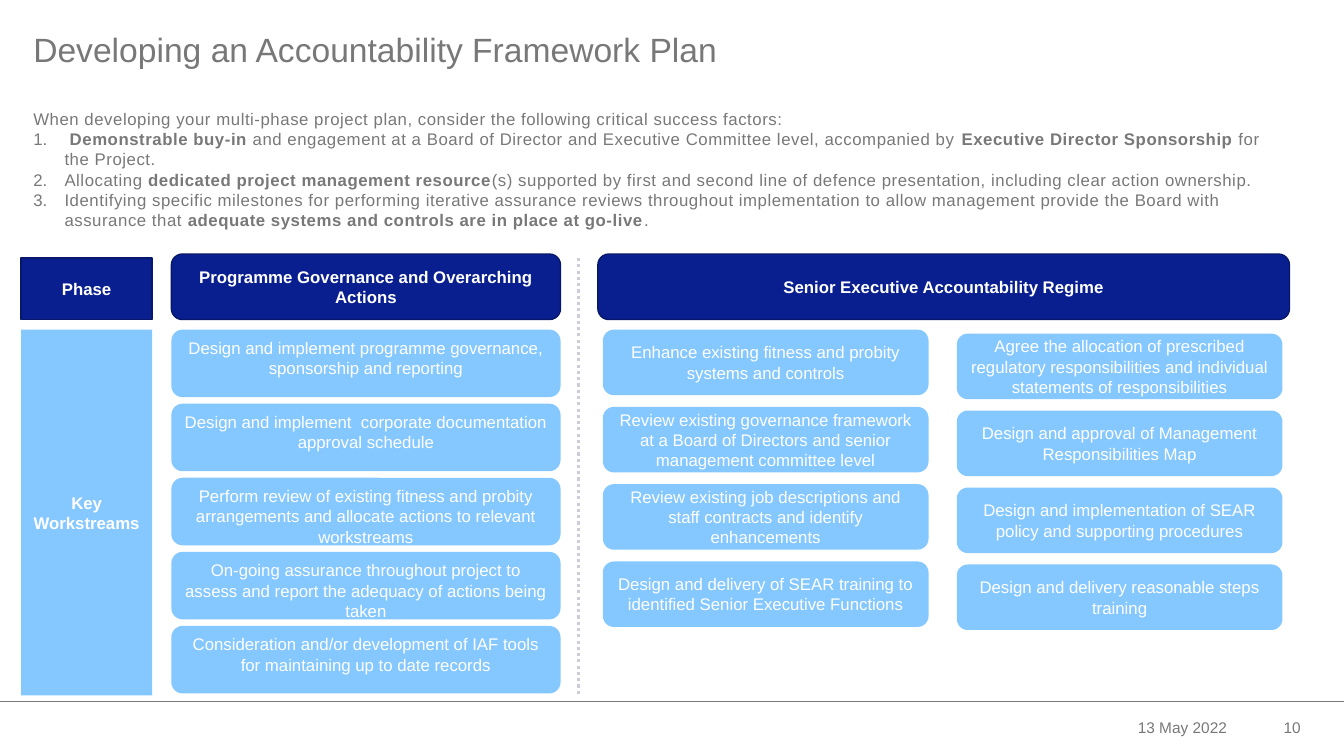
from dataclasses import dataclass

from lxml.etree import SubElement
from pptx import Presentation
from pptx.dml.color import RGBColor
from pptx.enum.dml import MSO_LINE
from pptx.enum.shapes import MSO_CONNECTOR, MSO_SHAPE
from pptx.enum.text import MSO_ANCHOR as Anchor
from pptx.enum.text import MSO_AUTO_SIZE, PP_ALIGN as Align
from pptx.oxml.ns import qn
from pptx.slide import Slide
from pptx.text.text import TextFrame
from pptx.util import Inches, Pt

GREY = RGBColor(0x78, 0x78, 0x78)
WHITE = RGBColor(0xFF, 0xFF, 0xFF)
NAVY = RGBColor(0x0A, 0x1F, 0x8F)
DARK_NAVY = RGBColor(0x07, 0x17, 0x6A)
SKY = RGBColor(0x85, 0xC8, 0xFF)
PALE = RGBColor(0xCC, 0xCC, 0xDB)


@dataclass
class Box:
    left: float
    top: float
    width: float
    height: float
    text: str
    rounded: bool = True
    header: bool = False
    anchor: Anchor = Anchor.MIDDLE


@dataclass
class Column:
    left: float
    top: float
    last_top: float
    width: float
    height: float
    anchor: Anchor
    items: list[str]


@dataclass
class Rule:
    start: tuple[float, float]
    end: tuple[float, float]
    color: RGBColor
    weight: float
    dash: MSO_LINE | None = None


HEADERS = [
    Box(1.7, 2.52, 3.86, 0.65, "**Programme Governance and Overarching Actions**", header=True),
    Box(0.21, 2.56, 1.3, 0.61, "**Phase**", rounded=False, header=True),
    Box(0.21, 3.27, 1.3, 3.63, "**Key Workstreams**", rounded=False),
    Box(5.93, 2.52, 6.86, 0.65, "**Senior Executive Accountability Regime**", header=True),
]

COLUMNS = [
    Column(1.7, 3.27, 6.21, 3.86, 0.67, Anchor.TOP, [
        "Design and implement programme governance, sponsorship and reporting",
        "Design and implement  corporate documentation approval schedule",
        "Perform review of existing fitness and probity arrangements and allocate actions to relevant workstreams",
        "On-going assurance throughout project to assess and report the adequacy of actions being taken",
        "Consideration and/or development of IAF tools for maintaining up to date records",
    ]),
    Column(5.98, 3.27, 5.57, 3.23, 0.65, Anchor.MIDDLE, [
        "Enhance existing fitness and probity systems and controls",
        "Review existing governance framework at a Board of Directors and senior management committee level",
        "Review existing job descriptions and staff contracts and identify enhancements",
        "Design and delivery of SEAR training to identified Senior Executive Functions",
    ]),
    Column(9.49, 3.31, 5.6, 3.23, 0.65, Anchor.MIDDLE, [
        "Agree the allocation of prescribed regulatory responsibilities and individual statements of responsibilities",
        "Design and approval of Management Responsibilities Map",
        "Design and implementation of SEAR policy and supporting procedures",
        "Design and delivery reasonable steps training",
    ]),
]

INTRODUCTION = "When developing your multi-phase project plan, consider the following critical success factors:"
SUCCESS_FACTORS = [
    " **Demonstrable buy-in **and engagement at a Board of Director and Executive Committee level, "
    "accompanied by **Executive Director Sponsorship **for the Project.",
    "Allocating **dedicated project management resource**(s) supported by first and second line of "
    "defence presentation, including clear action ownership.",
    "Identifying specific milestones for performing iterative assurance reviews throughout implementation "
    "to allow management provide the Board with assurance that "
    "**adequate systems and controls are in place at go-live**.",
]

FOOTER_RULE = Rule((0, 6.96), (13.33, 6.96), GREY, 0.5)
COLUMN_RULE = Rule((5.74, 2.56), (5.74, 6.9), PALE, 2.25, MSO_LINE.ROUND_DOT)


def write_text(frame: TextFrame, text: str, *, size: float = 12, color: RGBColor = GREY,
               align: Align = Align.LEFT, anchor: Anchor = Anchor.TOP, spacing: float = 0,
               line_spacing: float = 1.0, numbered: bool = False, append: bool = False) -> None:
    frame.word_wrap = True
    frame.vertical_anchor = anchor
    paragraph = frame.add_paragraph() if append else frame.paragraphs[0]
    paragraph.alignment = align
    paragraph.line_spacing = line_spacing
    paragraph.space_before = Pt(0)
    if numbered:
        properties = paragraph._p.get_or_add_pPr()
        properties.set("marL", str(Inches(0.31)))
        properties.set("indent", str(-Inches(0.31)))
        SubElement(properties, qn("a:buFont"), typeface="+mj-lt")
        SubElement(properties, qn("a:buAutoNum"), type="arabicPeriod")
    for index, part in enumerate(text.split("**")):
        if part:
            run = paragraph.add_run()
            run.text = part
            run.font.name = "Arial"
            run.font.size = Pt(size)
            run.font.bold = index % 2 == 1
            run.font.color.rgb = color
            if spacing:
                run.font._element.set("spc", str(round(spacing * 100)))


def add_text_frame(slide: Slide, left: float, top: float, width: float, height: float) -> TextFrame:
    return slide.shapes.add_textbox(Inches(left), Inches(top), Inches(width), Inches(height)).text_frame


def add_box(slide: Slide, box: Box) -> None:
    preset = MSO_SHAPE.ROUNDED_RECTANGLE if box.rounded else MSO_SHAPE.RECTANGLE
    shape = slide.shapes.add_shape(
        preset, Inches(box.left), Inches(box.top), Inches(box.width), Inches(box.height))
    shape.shadow.inherit = False
    shape.fill.solid()
    shape.fill.fore_color.rgb = NAVY if box.header else SKY
    if box.header:
        shape.line.color.rgb = DARK_NAVY
        shape.line.width = Pt(1)
    else:
        shape.line.fill.background()
    write_text(shape.text_frame, box.text, color=WHITE, align=Align.CENTER, anchor=box.anchor)


def add_column(slide: Slide, column: Column) -> None:
    pitch = (column.last_top - column.top) / (len(column.items) - 1)
    for row, item in enumerate(column.items):
        add_box(slide, Box(column.left, column.top + row * pitch, column.width, column.height,
                           item, anchor=column.anchor))


def add_rule(slide: Slide, rule: Rule) -> None:
    connector = slide.shapes.add_connector(
        MSO_CONNECTOR.STRAIGHT, *map(Inches, rule.start), *map(Inches, rule.end))
    connector.line.color.rgb = rule.color
    connector.line.width = Pt(rule.weight)
    if rule.dash is not None:
        connector.line.dash_style = rule.dash
    SubElement(connector._element.spPr, qn("a:effectLst"))


def add_title(slide: Slide) -> None:
    title = slide.shapes.title
    title.left, title.top, title.width, title.height = map(Inches, (0.33, 0.33, 7.68, 0.39))
    frame = title.text_frame
    frame.auto_size = MSO_AUTO_SIZE.NONE
    frame.margin_left = frame.margin_top = frame.margin_right = 0
    frame.margin_bottom = Inches(0.08)
    write_text(frame, "Developing an Accountability Framework Plan", size=24, line_spacing=0.9)


def add_success_factors(slide: Slide) -> None:
    frame = add_text_frame(slide, 0.33, 1.03, 12.29, 1.31)
    frame.margin_left = 0
    write_text(frame, INTRODUCTION, spacing=0.4)
    for factor in SUCCESS_FACTORS:
        write_text(frame, factor, spacing=0.4, numbered=True, append=True)


def main() -> None:
    presentation = Presentation()
    presentation.slide_width, presentation.slide_height = Inches(13.33), Inches(7.5)
    slide = presentation.slides.add_slide(presentation.slide_layouts[5])
    add_rule(slide, FOOTER_RULE)
    for left, width, text in ((9.06, 3.21, "13 May 2022"), (12.27, 0.73, "10")):
        write_text(add_text_frame(slide, left, 7.07, width, 0.3), text,
                   size=11, align=Align.RIGHT, anchor=Anchor.MIDDLE)
    add_title(slide)
    add_success_factors(slide)
    for header in HEADERS:
        add_box(slide, header)
    for column in COLUMNS:
        add_column(slide, column)
    add_rule(slide, COLUMN_RULE)
    presentation.save("out.pptx")


if __name__ == "__main__":
    main()
